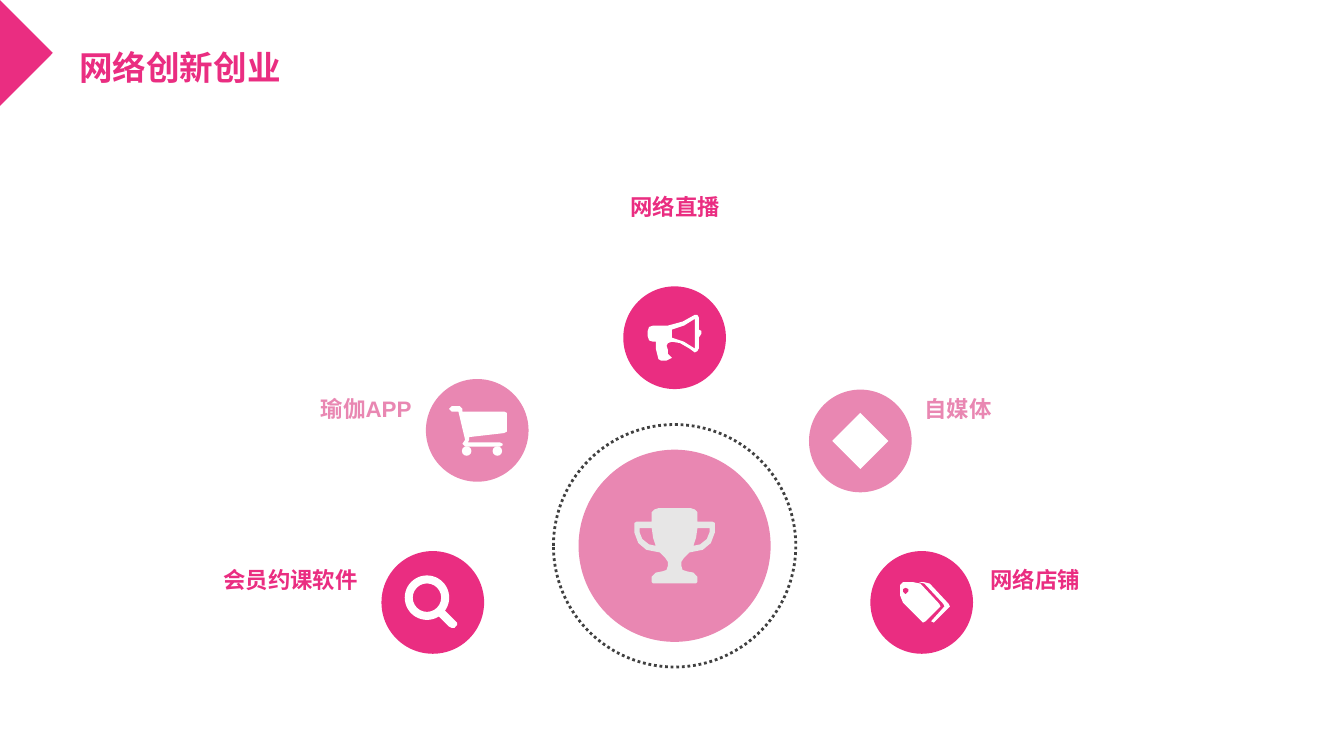
from pptx import Presentation
from pptx.dml.color import RGBColor
from pptx.enum.dml import MSO_LINE
from pptx.enum.shapes import MSO_SHAPE as Preset
from pptx.enum.text import MSO_ANCHOR, MSO_AUTO_SIZE, PP_ALIGN as Align
from pptx.util import Cm, Pt

PINK = RGBColor(0xEA, 0x2D, 0x81)
ROSE = RGBColor(0xE9, 0x87, 0xB2)
WHITE = RGBColor(0xFF, 0xFF, 0xFF)
SILVER = RGBColor(0xE7, 0xE6, 0xE6)
CHARCOAL = RGBColor(0x40, 0x40, 0x40)

ICON_UNIT = Cm(2.54) / 100  # icon outlines are drawn on this grid
DISC = 1.94

prs = Presentation()
prs.slide_width, prs.slide_height = Cm(25.4), Cm(14.28)
slide = prs.slides.add_slide(prs.slide_layouts[5])
shapes = slide.shapes


def add_centred(preset, x, y, size, color):
    """Add a filled preset shape centred on x, y (all in cm)."""
    shape = shapes.add_shape(preset, Cm(x - size / 2), Cm(y - size / 2), Cm(size), Cm(size))
    shape.shadow.inherit = False
    shape.fill.solid()
    shape.fill.fore_color.rgb = color
    shape.line.fill.background()
    return shape


def add_outline(x, y, contours, color, unit=ICON_UNIT):
    """Add one filled outline around x, y; contours inside the first are holes."""
    first, *others = contours
    builder = shapes.build_freeform(*first[0], scale=unit)
    builder.add_line_segments(first[1:], close=True)
    for contour in others:
        builder.move_to(*contour[0])
        builder.add_line_segments(contour[1:], close=True)
    shape = builder.convert_to_shape(Cm(x), Cm(y))
    shape.shadow.inherit = False
    shape.fill.solid()
    shape.fill.fore_color.rgb = color
    shape.line.fill.background()


# Title and corner arrow
title = shapes.title
title.left, title.top, title.width, title.height = Cm(1.24), Cm(0.61), Cm(10.59), Cm(1.09)
title.text_frame.text = "网络创新创业"
title.text_frame.auto_size = MSO_AUTO_SIZE.NONE
title.text_frame.vertical_anchor = MSO_ANCHOR.TOP
heading = title.text_frame.paragraphs[0]
heading.alignment = Align.LEFT
heading.line_spacing = 1.2
heading.font.name, heading.font.size, heading.font.bold = "Arial", Pt(18), True
heading.font.color.rgb = PINK
add_outline(0, 0, [[(0, 0.17), (0.24, 0.17), (1.25, 1.19), (0, 2.4)]], PINK, Cm(1))

# Labels: text, left, top, width, alignment, colour
labels = [
    ("自媒体", 17.22, 7.34, 4.62, Align.LEFT, ROSE),
    ("网络直播", 10.13, 3.53, 5.26, Align.CENTER, PINK),
    ("瑜伽APP", 3, 7.34, 5.03, Align.RIGHT, ROSE),
    ("会员约课软件", 2.39, 10.57, 4.62, Align.RIGHT, PINK),
    ("网络店铺", 18.47, 10.57, 4.83, Align.LEFT, PINK),
]
for text, left, top, width, alignment, color in labels:
    frame = shapes.add_textbox(Cm(left), Cm(top), Cm(width), Cm(0.76)).text_frame
    frame.word_wrap = True
    frame.text = text
    label = frame.paragraphs[0]
    label.alignment = alignment
    label.font.name, label.font.size, label.font.bold = "Arial", Pt(12), True
    label.font.color.rgb = color

# Icon outlines, relative to the centre of their disc
handle = [(4, 10), (12, 18), (14, 19), (16, 19), (18, 17), (18, 15), (17, 14), (9, 6)]
cart = [(22, 1), (20, 2), (-6, 5), (-6, 7), (-7, 9), (17, 9), (19, 10), (19, 11), (17, 12),
        (-9, 12), (-11, 10), (-9, 7), (-14, -14), (-19, -14), (-21, -16), (-19, -18),
        (-13, -18), (-11, -16), (-11, -14), (20, -14), (22, -13)]
megaphone = [(20, -3), (18, 0), (18, 8), (17, 10), (15, 11), (11, 8), (4, 4), (-2, 3),
             (-5, 4), (-6, 6), (-5, 9), (-5, 12), (-2, 15), (-6, 17), (-10, 17), (-12, 16),
             (-14, 8), (-14, 3), (-16, 3), (-19, 2), (-20, -1), (-20, -5), (-19, -8),
             (-16, -9), (-5, -9), (6, -12), (15, -17), (17, -17), (18, -15), (18, -6), (20, -5)]
megaphone_bell = [(15, -14), (7, -9), (-2, -6), (-2, 0), (7, 3), (15, 8)]
front_tag = [(13, 4), (3, 14), (1, 15), (0, 14), (-14, 0), (-16, -5), (-16, -13),
             (-14, -15), (-6, -15), (-1, -14), (13, 1), (14, 3)]
tag_hole = [(-12, -11), (-14, -10), (-14, -8), (-12, -6), (-10, -8), (-10, -10)]
back_tag = [(20, 4), (10, 14), (9, 15), (7, 14), (16, 4), (17, 3), (16, 1), (2, -14),
            (-2, -15), (2, -15), (6, -14), (20, 1), (21, 3)]

# Topic discs: centre, colour, icon contours
topics = [
    (8.18, 11.38, PINK, [handle]),
    (9.02, 8.13, ROSE, [cart]),
    (12.75, 6.38, PINK, [megaphone, megaphone_bell]),
    (16.26, 8.33, ROSE, []),
    (17.42, 11.38, PINK, [front_tag, tag_hole, back_tag]),
]
for x, y, color, contours in topics:
    add_centred(Preset.OVAL, x, y, DISC, color)
    if contours:
        add_outline(x, y, contours, WHITE)
    else:
        add_centred(Preset.DIAMOND, x, y, 1.06, WHITE)

lens = add_centred(Preset.DONUT, 8.07, 11.29, 0.84, WHITE)
lens.adjustments[0] = 0.18
for wheel_x in (8.82, 9.4):
    add_centred(Preset.OVAL, wheel_x, 8.52, 0.18, WHITE)

# Trophy in the middle, its left half mirrored from the right
hub_x, hub_y = 12.75, 10.31
add_centred(Preset.OVAL, hub_x, hub_y, 3.63, ROSE)
right_half = [(12, -28), (15, -27), (17, -25), (17, -18), (28, -18), (30, -17), (30, -10),
              (27, -2), (21, 3), (11, 5), (7, 9), (5, 12), (5, 15), (6, 18), (9, 19),
              (14, 20), (17, 23), (17, 27), (16, 28)]
right_handle = [(17, -13), (26, -13), (26, -10), (24, -5), (19, -1), (14, 0), (16, -6)]
cup = right_half + [(-x, y) for x, y in reversed(right_half)]
left_handle = [(-x, y) for x, y in right_handle]
add_outline(hub_x, hub_y, [cup, left_handle, right_handle], SILVER)

ring = add_centred(Preset.OVAL, hub_x, hub_y, 4.58, WHITE)
ring.fill.background()
ring.line.color.rgb = CHARCOAL
ring.line.width = Pt(1.5)
ring.line.dash_style = MSO_LINE.ROUND_DOT

prs.save("out.pptx")
